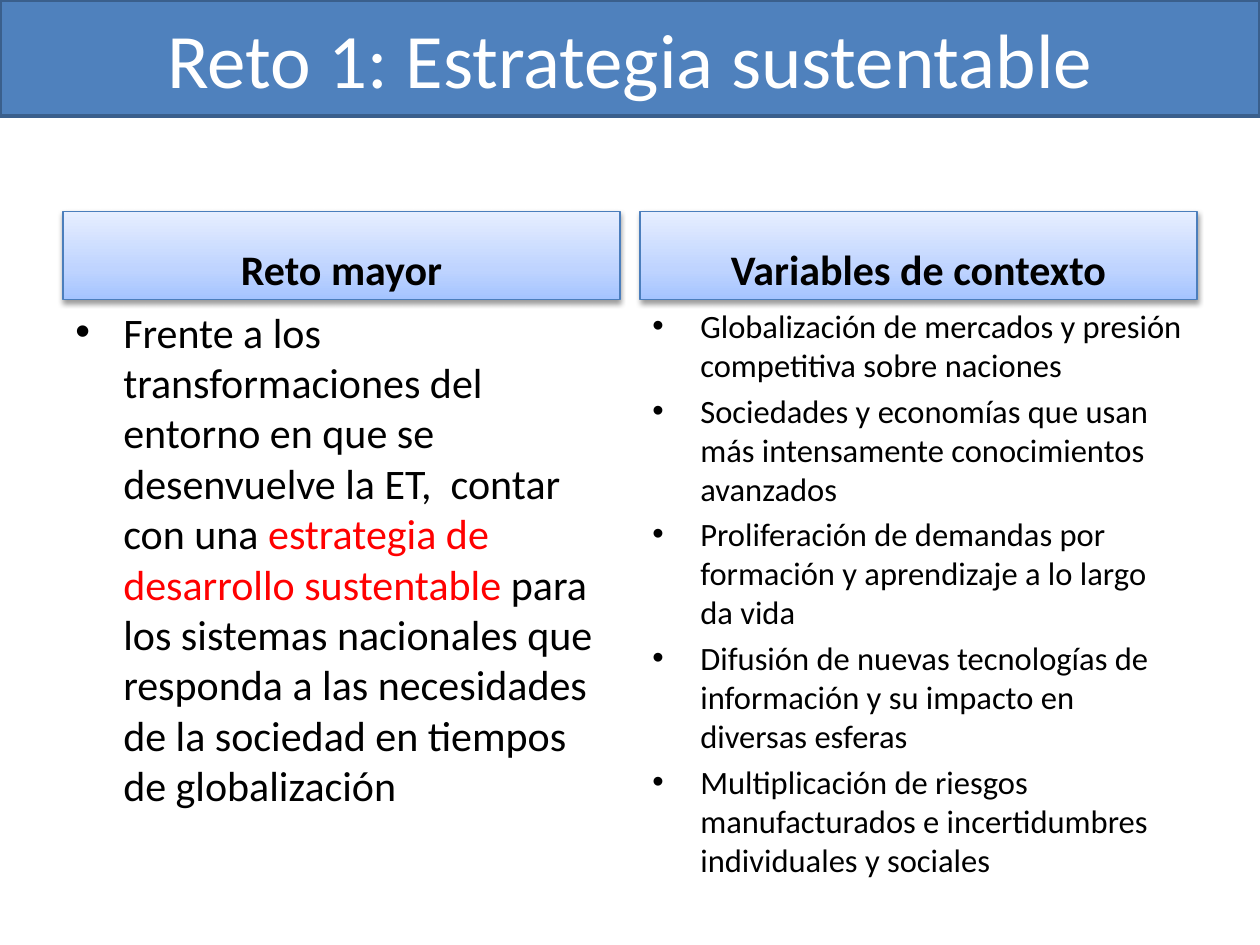
"""Build the slide on challenge 1: a title band above two headed columns."""
import copy
from dataclasses import dataclass

import lxml.etree
import pptx
import pptx.dml.color
import pptx.enum.shapes
import pptx.enum.text
import pptx.oxml.ns
import pptx.util


@dataclass(frozen=True)
class Theme:
    font: str = "Calibri"
    band: str = "4F81BD"
    band_line: str = "3A5F8C"
    header_line: str = "4B7EBC"
    header_gradient: tuple = ((0, "A4C4FF"), (0.35, "BFD4FF"), (1, "E6EEFF"))
    text: str = "000000"
    title_text: str = "FFFFFF"
    accent: str = "FF0000"
    title_size: float = 44
    header_size: float = 24
    space_share: float = 0.2


@dataclass(frozen=True)
class Grid:
    width: float = 10
    height: float = 7.5
    title_height: float = 0.92
    margin: float = 0.5
    gap: float = 0.16
    header_top: float = 1.68
    header_height: float = 0.7
    body_height: float = 4.32
    indent: float = 0.38

    @property
    def column_width(self) -> float:
        return (self.width - 2 * self.margin - self.gap) / 2

    @property
    def body_top(self) -> float:
        return self.header_top + self.header_height

    def column_left(self, index: int) -> float:
        return self.margin + index * (self.column_width + self.gap)


THEME = Theme()
GRID = Grid()


@dataclass(frozen=True)
class Run:
    text: str
    color: str = THEME.text


@dataclass(frozen=True)
class Column:
    header: str
    size: float
    bullets: tuple


COLUMNS = (
    Column("Reto mayor", 24, (
        (
            Run("Frente a los transformaciones del entorno en que se desenvuelve la ET,  contar con una "),
            Run("estrategia de desarrollo sustentable", THEME.accent),
            Run(" para los sistemas nacionales que responda a las necesidades "
                "de la sociedad en tiempos de globalización"),
        ),
    )),
    Column("Variables de contexto", 18.6, (
        (Run("Globalización de mercados y presión competitiva sobre naciones"),),
        (Run("Sociedades y economías que usan más intensamente conocimientos avanzados"),),
        (Run("Proliferación de demandas por formación y aprendizaje a lo largo da vida"),),
        (Run("Difusión de nuevas tecnologías de información y su impacto en diversas esferas"),),
        (Run("Multiplicación de riesgos manufacturados e incertidumbres individuales y sociales"),),
    )),
)


def rgb(color: str) -> pptx.dml.color.RGBColor:
    """Turn a hex string into a colour."""
    return pptx.dml.color.RGBColor.from_string(color)


def inches(*lengths: float) -> list:
    """Turn numbers into lengths in inches."""
    return [pptx.util.Inches(length) for length in lengths]


def add_text(paragraph, text: str, *, size: float, color: str = THEME.text, bold: bool = False) -> None:
    """Append a formatted run to a paragraph."""
    run = paragraph.add_run()
    run.text = text
    run.font.name = THEME.font
    run.font.size = pptx.util.Pt(size)
    run.font.bold = bold
    run.font.color.rgb = rgb(color)


def set_line(shape, color: str, width: float) -> None:
    """Outline a shape."""
    shape.line.color.rgb = rgb(color)
    shape.line.width = pptx.util.Pt(width)


def set_header_fill(shape) -> None:
    """Fill a header with the upward three-stop gradient."""
    shape.fill.gradient()
    shape.fill.gradient_angle = 90
    stops = shape._element.spPr.find(".//" + pptx.oxml.ns.qn("a:gsLst"))
    stops.insert(1, copy.deepcopy(stops[0]))
    for stop, (position, color) in zip(shape.fill.gradient_stops, THEME.header_gradient):
        stop.position = position
        stop.color.rgb = rgb(color)


def set_shadow(shape) -> None:
    """Give a shape a soft shadow straight below it."""
    shape.shadow.inherit = False
    effects = shape._element.spPr.find(pptx.oxml.ns.qn("a:effectLst"))
    shadow = lxml.etree.SubElement(
        effects, pptx.oxml.ns.qn("a:outerShdw"), rotWithShape="0", dir="5400000",
        blurRad=str(pptx.util.Pt(3.1)), dist=str(pptx.util.Pt(1.6)))
    color = lxml.etree.SubElement(shadow, pptx.oxml.ns.qn("a:srgbClr"), val="000000")
    lxml.etree.SubElement(color, pptx.oxml.ns.qn("a:alpha"), val="38000")


def set_bullet(paragraph) -> None:
    """Give a paragraph a hanging bullet."""
    properties = paragraph._p.get_or_add_pPr()
    indent = pptx.util.Inches(GRID.indent)
    properties.set("marL", str(indent))
    properties.set("indent", str(-indent))
    lxml.etree.SubElement(properties, pptx.oxml.ns.qn("a:buFont"), typeface="Arial")
    lxml.etree.SubElement(properties, pptx.oxml.ns.qn("a:buChar"), char="•")


def draw_title(slide, text: str) -> None:
    """Turn the title placeholder into a full-width band."""
    title = slide.shapes.title
    title.left, title.top, title.width, title.height = inches(0, 0, GRID.width, GRID.title_height)
    title.fill.solid()
    title.fill.fore_color.rgb = rgb(THEME.band)
    set_line(title, THEME.band_line, 2)
    frame = title.text_frame
    frame.auto_size = pptx.enum.text.MSO_AUTO_SIZE.NONE
    frame.vertical_anchor = pptx.enum.text.MSO_ANCHOR.MIDDLE
    paragraph = frame.paragraphs[0]
    paragraph.alignment = pptx.enum.text.PP_ALIGN.CENTER
    add_text(paragraph, text, size=THEME.title_size, color=THEME.title_text)


def draw_header(slide, text: str, left: float) -> None:
    """Draw the shaded header of a column."""
    header = slide.shapes.add_shape(
        pptx.enum.shapes.MSO_SHAPE.RECTANGLE,
        *inches(left, GRID.header_top, GRID.column_width, GRID.header_height))
    set_header_fill(header)
    set_line(header, THEME.header_line, 0.75)
    set_shadow(header)
    frame = header.text_frame
    frame.word_wrap = True
    frame.vertical_anchor = pptx.enum.text.MSO_ANCHOR.BOTTOM
    paragraph = frame.paragraphs[0]
    paragraph.alignment = pptx.enum.text.PP_ALIGN.CENTER
    paragraph.space_before = pptx.util.Pt(THEME.header_size * THEME.space_share)
    add_text(paragraph, text, size=THEME.header_size, bold=True)


def draw_column(slide, column: Column, index: int) -> None:
    """Draw a column: its header and its bulleted text."""
    left = GRID.column_left(index)
    draw_header(slide, column.header, left)
    body = slide.shapes.add_textbox(*inches(left, GRID.body_top, GRID.column_width, GRID.body_height))
    frame = body.text_frame
    frame.word_wrap = True
    for number, runs in enumerate(column.bullets):
        paragraph = frame.add_paragraph() if number else frame.paragraphs[0]
        paragraph.space_before = pptx.util.Pt(column.size * THEME.space_share)
        set_bullet(paragraph)
        for run in runs:
            add_text(paragraph, run.text, size=column.size, color=run.color)


def main() -> None:
    """Build and save the presentation."""
    presentation = pptx.Presentation()
    presentation.slide_width, presentation.slide_height = inches(GRID.width, GRID.height)
    slide = presentation.slides.add_slide(presentation.slide_layouts.get_by_name("Title Only"))
    draw_title(slide, "Reto 1: Estrategia sustentable")
    for index, column in enumerate(COLUMNS):
        draw_column(slide, column, index)
    presentation.save("out.pptx")


if __name__ == "__main__":
    main()
